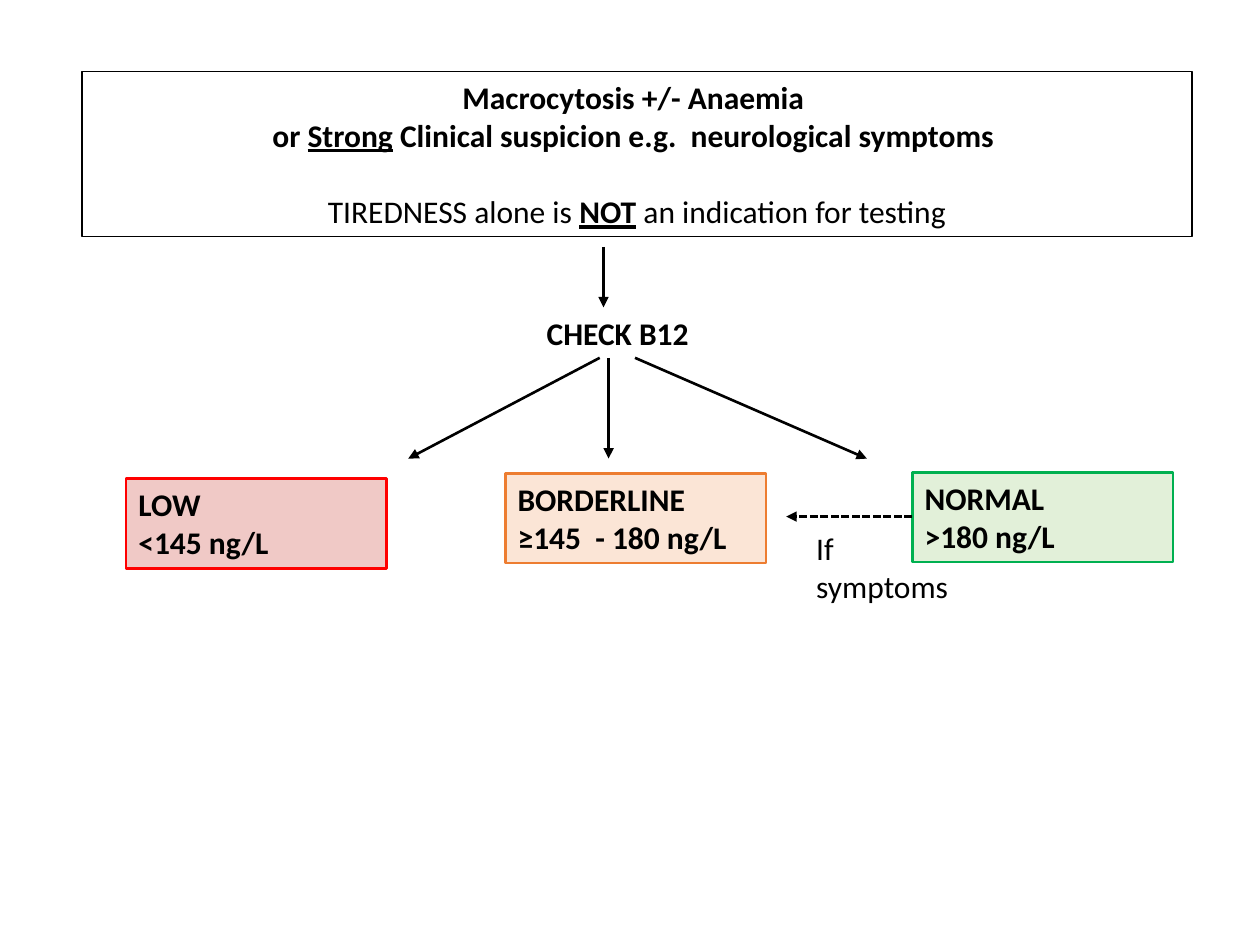
from lxml import etree
from pptx import Presentation
from pptx.dml.color import RGBColor
from pptx.enum.dml import MSO_LINE
from pptx.enum.shapes import MSO_CONNECTOR, MSO_SHAPE
from pptx.enum.text import MSO_ANCHOR, MSO_AUTO_SIZE, PP_ALIGN
from pptx.oxml.ns import qn
from pptx.util import Inches, Pt

RECTANGLE = MSO_SHAPE.RECTANGLE
STRAIGHT = MSO_CONNECTOR.STRAIGHT
DASHED = MSO_LINE.SQUARE_DOT
TOP = MSO_ANCHOR.TOP
LEFT, CENTER = PP_ALIGN.LEFT, PP_ALIGN.CENTER
NO_FIT = MSO_AUTO_SIZE.NONE

COLUMNS, ROWS = 100, 75
TITLE_ONLY = 5
COLORS = {
    "ink": "000000",
    "low": "F0C9C6", "low edge": "FF0000",
    "borderline": "FBE5D6", "borderline edge": "ED7D31",
    "normal": "E2F0D9", "normal edge": "00B050",
}


class Flowchart:
    font = "Calibri"
    size = Pt(18)
    stroke = Pt(1.5)

    def __init__(self, deck):
        self.column = deck.slide_width / COLUMNS
        self.row = deck.slide_height / ROWS
        self.slide = deck.slides.add_slide(deck.slide_layouts[TITLE_ONLY])

    def color(self, name):
        return RGBColor.from_string(COLORS[name])

    def place(self, *grid):
        units = (self.column, self.row) * 2
        return [round(value * unit) for value, unit in zip(grid, units)]

    def set_lines(self, frame, lines, align=LEFT):
        frame.word_wrap = True
        frame.auto_size = NO_FIT
        frame.vertical_anchor = TOP
        frame.text = "\n".join("".join(text for text, _ in line) for line in lines)
        for paragraph, line in zip(frame.paragraphs, lines):
            paragraph.text = ""
            paragraph.alignment = align
            for text, style in line:
                run = paragraph.add_run()
                run.text = text
                run.font.name = self.font
                run.font.size = self.size
                run.font.color.rgb = self.color("ink")
                run.font.bold = "b" in style
                run.font.underline = "u" in style

    def outline(self, line, name, width):
        line.color.rgb = self.color(name)
        line.width = width

    def criteria(self, grid, lines, gap):
        title = self.slide.shapes.title
        title.left, title.top, title.width, title.height = self.place(*grid)
        self.outline(title.line, "ink", Pt(0.75))
        self.set_lines(title.text_frame, lines, CENTER)
        title.text_frame.paragraphs[-1].space_before = gap

    def result(self, grid, name, lines):
        box = self.slide.shapes.add_shape(RECTANGLE, *self.place(*grid))
        box.shadow.inherit = False
        box.fill.solid()
        box.fill.fore_color.rgb = self.color(name)
        self.outline(box.line, f"{name} edge", self.stroke)
        self.set_lines(box.text_frame, [[(line, "b")] for line in lines])

    def label(self, grid, lines, style=""):
        box = self.slide.shapes.add_textbox(*self.place(*grid))
        self.set_lines(box.text_frame, [[(line, style)] for line in lines])

    def arrow(self, start, end, dash=None):
        connector = self.slide.shapes.add_connector(
            STRAIGHT, *self.place(*start, *end))
        self.outline(connector.line, "ink", self.stroke)
        if dash:
            connector.line.dash_style = dash
        properties = connector.element.spPr
        stroke = properties.find(qn("a:ln"))
        etree.SubElement(stroke, qn("a:tailEnd"), type="triangle")
        etree.SubElement(properties, qn("a:effectLst"))


def main():
    deck = Presentation()
    deck.slide_width, deck.slide_height = Inches(10), Inches(7.5)
    chart = Flowchart(deck)

    chart.criteria((6.5, 5.7, 88.1, 13.1), [
        [("Macrocytosis +/- Anaemia ", "b")],
        [("or ", "b"), ("Strong", "bu"),
         (" Clinical suspicion e.g.  neurological symptoms ", "b")],
        [("TIREDNESS alone is ", ""), ("NOT", "bu"),
         (" ", "b"), ("an indication for testing", "")],
    ], gap=Pt(22))

    results = [
        (10, 38, "low", "<145 ng/L"),
        (40.1, 37.6, "borderline", "≥145  - 180 ng/L"),
        (72.4, 37.5, "normal", ">180 ng/L"),
    ]
    for left, top, level, threshold in results:
        chart.result((left, top, 20.7, 7.1), level, [level.upper(), threshold])

    chart.label((42.4, 24.4, 18.3, 4), ["CHECK B12"], "b")
    chart.arrow((47.9, 19.6), (47.9, 24.4))
    for start, end in [(48.3, 48.3), (47.6, 32.4), (50.4, 68.8)]:
        chart.arrow((start, 28.4), (end, 36.4))
    chart.arrow((72.4, 41), (62.4, 41), DASHED)
    chart.label((63.8, 41.5, 14, 7.1), ["If", "symptoms"])

    deck.save("out.pptx")


if __name__ == "__main__":
    main()
